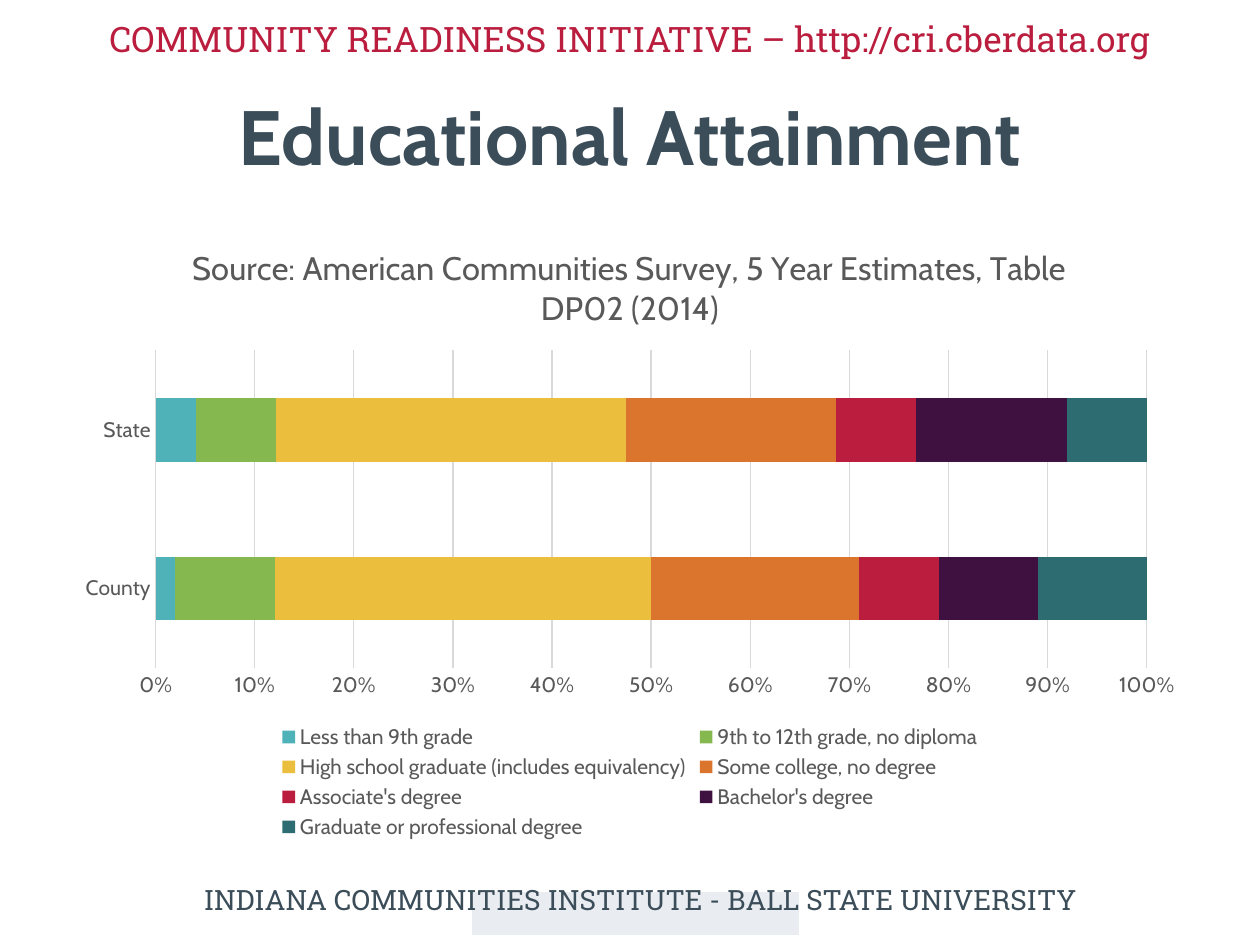
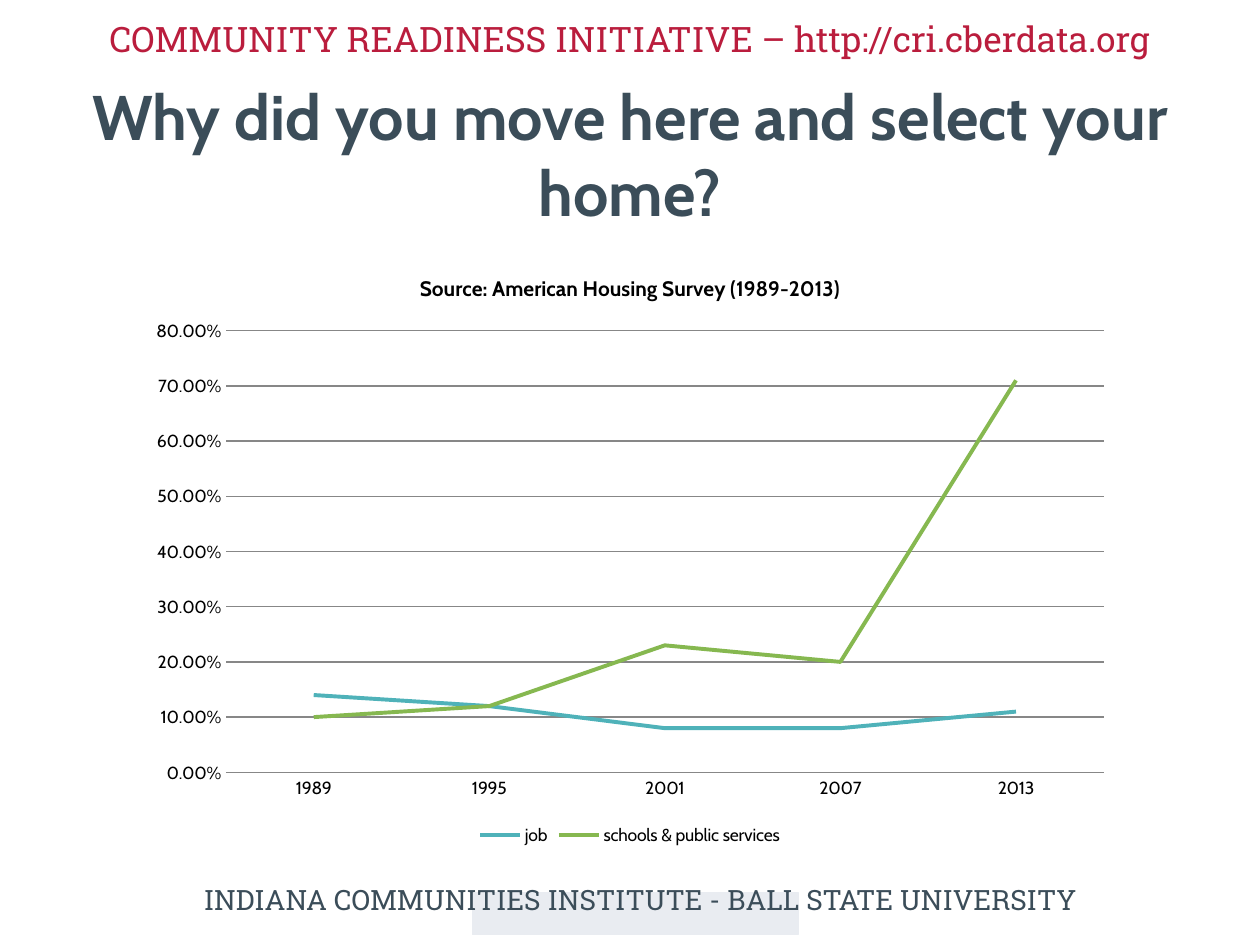
import dataclasses

import pptx
import pptx.chart.data
import pptx.dml.color
import pptx.enum.chart
import pptx.enum.shapes
import pptx.enum.text
import pptx.util

Pt = pptx.util.Pt
ChartType = pptx.enum.chart.XL_CHART_TYPE


@dataclasses.dataclass(frozen=True)
class Theme:
    heading_font: str = "Roboto Slab"
    text_font: str = "Cabin"
    white: str = "FFFFFF"
    black: str = "000000"
    slate: str = "3B4D59"
    crimson: str = "BA1D3D"
    pale: str = "E9ECF1"
    grey: str = "595959"
    light_grid: str = "D9D9D9"
    dark_grid: str = "878787"
    series: tuple = ("4FB2B9", "86B850", "ECBE3D", "DB742C",
                     "BA1D3D", "3F1140", "2D6D71")
    banner_size: float = 20
    footer_size: float = 16
    hairline: float = 0.75
    series_line: float = 2.25


THEME = Theme()


def rgb(color):
    return pptx.dml.color.RGBColor.from_string(color)


def set_all(target, values):
    for name, value in values.items():
        setattr(target, name, value)


def set_font(font, size, color, name=THEME.text_font, bold=False):
    set_all(font, {"size": Pt(size), "name": name, "bold": bold})
    font.color.rgb = rgb(color)


def set_line(line, color, width=THEME.hairline):
    line.color.rgb = rgb(color)
    line.width = Pt(width)


def set_box(shape, box):
    set_all(shape, dict(zip(("left", "top", "width", "height"), map(Pt, box))))


def write_centred(text_frame, text, **font_format):
    text_frame.word_wrap = True
    paragraph = text_frame.paragraphs[0]
    paragraph.alignment = pptx.enum.text.PP_ALIGN.CENTER
    run = paragraph.add_run()
    run.text = text
    set_font(run.font, **font_format)


# Shared bands: drawn on a slide, then moved to its layout
def add_band(slide, box, color, outlined):
    band = slide.shapes.add_shape(
        pptx.enum.shapes.MSO_SHAPE.RECTANGLE, *map(Pt, box))
    band.shadow.inherit = False
    band.fill.solid()
    band.fill.fore_color.rgb = rgb(color)
    if outlined:
        set_line(band.line, color)
    else:
        band.line.fill.background()
    return band


def add_heading(slide, box, text, size, color):
    heading = slide.shapes.add_textbox(*map(Pt, box))
    write_centred(heading.text_frame, text, size=size, color=color,
                  name=THEME.heading_font)
    return heading


def build_layout_bands(slide):
    parts = [
        add_band(slide, (270, 510, 186, 24), THEME.pale, True),
        add_band(slide, (0, 0, 720, 42), THEME.white, False),
        add_heading(slide, (42, 501, 648, 27),
                    "INDIANA COMMUNITIES INSTITUTE - BALL STATE UNIVERSITY",
                    THEME.footer_size, THEME.slate),
        add_heading(slide, (6, 6.5, 708, 32),
                    "COMMUNITY READINESS INITIATIVE – http://cri.cberdata.org",
                    THEME.banner_size, THEME.crimson),
    ]
    for part in parts:
        slide.slide_layout.shapes.element.append(part.element)


# Title region
def fill_title(slide, box, text, size):
    title = slide.shapes.title
    set_box(title, box)
    set_all(title.text_frame, {
        "auto_size": pptx.enum.text.MSO_AUTO_SIZE.NONE,
        "vertical_anchor": pptx.enum.text.MSO_ANCHOR.MIDDLE,
    })
    write_centred(title.text_frame, text, size=size, color=THEME.slate,
                  bold=True)


# Chart region
def add_chart(slide, box, chart_type, categories, series, title, title_size,
              title_bold, text_size, text_color, grid_color, number_format):
    data = pptx.chart.data.CategoryChartData(number_format="General")
    data.categories = categories
    for name, values in series.items():
        data.add_series(name, values)
    chart = slide.shapes.add_chart(chart_type, *map(Pt, box), data).chart
    set_font(chart.font, text_size, text_color)

    chart.has_title = True
    chart.chart_title.include_in_layout = False
    write_centred(chart.chart_title.text_frame, title, size=title_size,
                  color=text_color, bold=title_bold)

    chart.has_legend = True
    set_all(chart.legend, {
        "position": pptx.enum.chart.XL_LEGEND_POSITION.BOTTOM,
        "include_in_layout": False,
    })
    set_font(chart.legend.font, text_size, text_color)

    for axis in (chart.category_axis, chart.value_axis):
        set_all(axis, {
            "major_tick_mark": pptx.enum.chart.XL_TICK_MARK.NONE,
            "minor_tick_mark": pptx.enum.chart.XL_TICK_MARK.NONE,
        })
        set_font(axis.tick_labels.font, text_size, text_color)
    set_line(chart.category_axis.format.line, grid_color)
    chart.value_axis.format.line.fill.background()
    chart.value_axis.has_major_gridlines = True
    set_line(chart.value_axis.major_gridlines.format.line, grid_color)
    set_all(chart.value_axis.tick_labels, {
        "number_format": number_format, "number_format_is_linked": False})
    chart.plots[0].vary_by_categories = False
    return chart


# Slide 1: stacked shares by level of schooling
def build_attainment_slide(slide):
    fill_title(slide, (36, 42, 648, 70), "Educational Attainment", 44)
    chart = add_chart(
        slide, (36, 126, 648, 356.5), ChartType.BAR_STACKED_100,
        ("County", "State"),
        {
            "Less than 9th grade": (2, 4),
            "9th to 12th grade, no diploma": (10, 8),
            "High school graduate (includes equivalency)": (38, 35),
            "Some college, no degree": (21, 21),
            "Associate's degree": (8, 8),
            "Bachelor's degree": (10, 15),
            "Graduate or professional degree": (11, 8),
        },
        title="Source: American Communities Survey, 5 Year Estimates, "
              "Table DP02 (2014)",
        title_size=18.6, title_bold=False, text_size=12,
        text_color=THEME.grey, grid_color=THEME.light_grid,
        number_format="0%")
    set_all(chart.plots[0], {"gap_width": 150, "overlap": 100})
    for series, color in zip(chart.plots[0].series, THEME.series):
        series.format.fill.solid()
        series.format.fill.fore_color.rgb = rgb(color)


# Slide 2: reasons for moving over time
def build_reasons_slide(slide):
    fill_title(slide, (36, 48, 648, 79),
               "Why did you move here and select your home?", 36)
    chart = add_chart(
        slide, (78, 144, 564, 342), ChartType.LINE,
        ("1989", "1995", "2001", "2007", "2013"),
        {
            "job": (0.14, 0.12, 0.08, 0.08, 0.11),
            "schools & public services": (0.10, 0.12, 0.23, 0.20, 0.71),
        },
        title="Source: American Housing Survey (1989-2013)",
        title_size=12, title_bold=True, text_size=10,
        text_color=THEME.black, grid_color=THEME.dark_grid,
        number_format="0.00%")
    set_all(chart.value_axis, {
        "minimum_scale": 0, "maximum_scale": 0.8, "major_unit": 0.1})
    for series, color in zip(chart.plots[0].series, THEME.series):
        series.smooth = False
        set_line(series.format.line, color, THEME.series_line)


def main():
    presentation = pptx.Presentation()
    set_all(presentation, {"slide_width": Pt(720), "slide_height": Pt(540)})
    layout = presentation.slide_layouts.get_by_name("Title Only")
    attainment, reasons = (
        presentation.slides.add_slide(layout) for _ in range(2))
    build_layout_bands(attainment)
    build_attainment_slide(attainment)
    build_reasons_slide(reasons)
    presentation.save("out.pptx")


if __name__ == "__main__":
    main()
